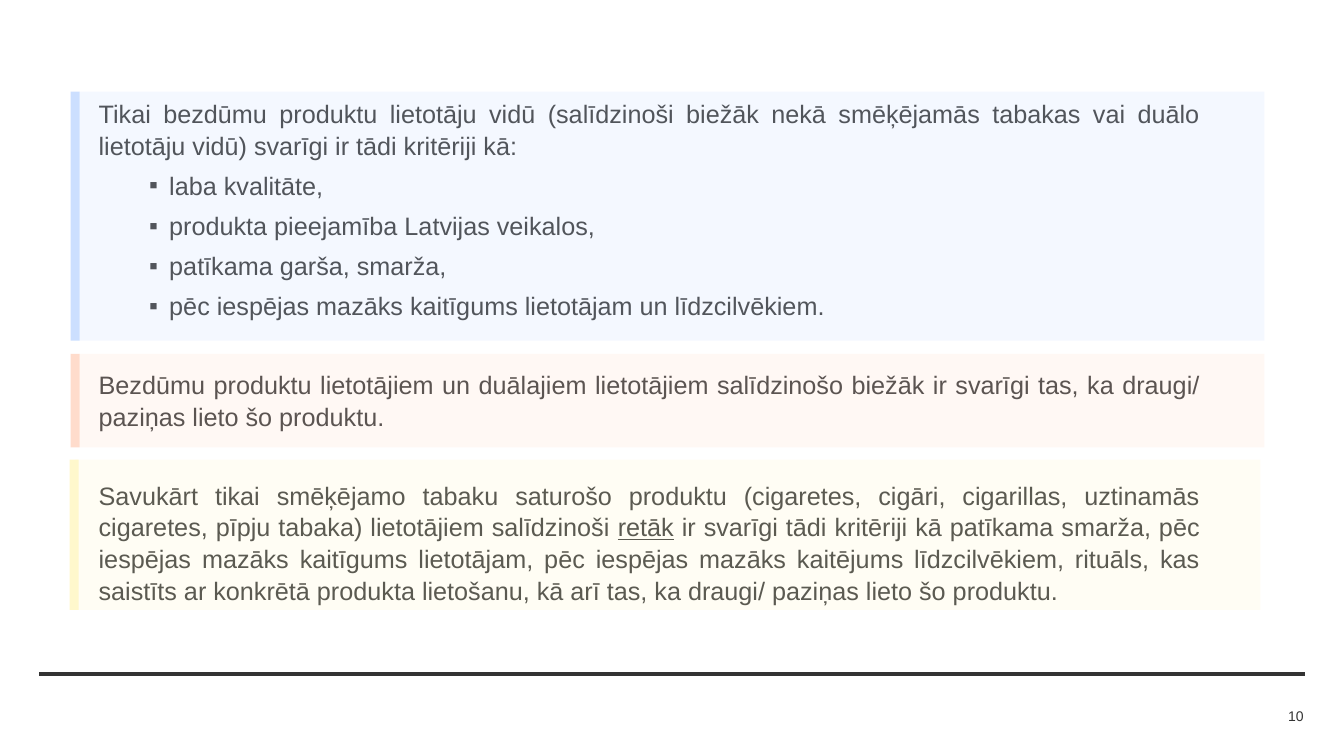
from lxml import etree
from pptx import Presentation, util as u
from pptx.dml.color import RGBColor
from pptx.enum import shapes, text
from pptx.oxml.ns import qn

INK = RGBColor(0x33, 0x33, 0x33)
BLUE = RGBColor(0xCC, 0xDF, 0xFF)
CORAL = RGBColor(0xFF, 0xDC, 0xCC)
YELLOW = RGBColor(0xFF, 0xF8, 0xCC)
FONT = "Arial"
STRIP = 0.09
GAP = 6
BREAK = 33.6  # space between the text blocks, in points

SMOKELESS = [
    "Tikai bezdūmu produktu lietotāju vidū (salīdzinoši biežāk nekā smēķējamās "
    "tabakas vai duālo lietotāju vidū) svarīgi ir tādi kritēriji kā:"
]
CRITERIA = [
    "laba kvalitāte,",
    "produkta pieejamība Latvijas veikalos,",
    "patīkama garša, smarža,",
    "pēc iespējas mazāks kaitīgums lietotājam un līdzcilvēkiem.",
]
FRIENDS = [
    "Bezdūmu produktu lietotājiem un duālajiem lietotājiem salīdzinošo biežāk "
    "ir svarīgi tas, ka draugi/ paziņas lieto šo produktu."
]
SMOKERS = [
    "Savukārt tikai smēķējamo tabaku saturošo produktu (cigaretes, cigāri, "
    "cigarillas, uztinamās cigaretes, pīpju tabaka) lietotājiem salīdzinoši ",
    "retāk",
    " ir svarīgi tādi kritēriji kā patīkama smarža, pēc iespējas mazāks "
    "kaitīgums lietotājam, pēc iespējas mazāks kaitējums līdzcilvēkiem, "
    "rituāls, kas saistīts ar konkrētā produkta lietošanu, kā arī tas, ka "
    "draugi/ paziņas lieto šo produktu.",
]
# strip left, panel left, panel width, top, height, colour
PANELS = [
    (0.7, 0.79, 11.75, 0.91, 2.47, BLUE),
    (0.7, 0.79, 11.75, 3.51, 0.93, CORAL),
    (0.69, 0.75, 11.75, 4.56, 1.49, YELLOW),
]


def write(par, parts, size=18, align=text.PP_ALIGN.JUSTIFY, before=0,
          spacing=1.05, bullet=False):
    """Fill a paragraph with runs; every second run is underlined."""
    par.alignment = align
    par.line_spacing = spacing
    par.space_before = u.Pt(before)
    if bullet:
        props = par._p.get_or_add_pPr()
        props.set("marL", str(u.Inches(0.7)))
        props.set("indent", str(u.Inches(-0.2)))
        etree.SubElement(props, qn("a:buFont")).set("typeface", FONT)
        etree.SubElement(props, qn("a:buChar")).set("char", "▪")
    for i, part in enumerate(parts):
        run = par.add_run()
        run.text = part
        run.font.name = FONT
        run.font.size = u.Pt(size)
        run.font.color.rgb = INK
        if i % 2:
            run.font.underline = True


def frame(slide, x, y, w, h):
    box = slide.shapes.add_textbox(*map(u.Inches, (x, y, w, h)))
    box.text_frame.word_wrap = True
    return box.text_frame


def body(slide, x, y, w, h):
    area = frame(slide, x, y, w, h)
    write(area.paragraphs[0], SMOKELESS)
    for item in CRITERIA:
        write(area.add_paragraph(), [item], before=GAP, bullet=True)
    for parts in (FRIENDS, SMOKERS):
        write(area.add_paragraph(), parts, before=BREAK)


def block(slide, x, y, w, h, color, alpha=None):
    """Add a plain rectangle; alpha is its opacity in percent."""
    rect = slide.shapes.add_shape(shapes.MSO_SHAPE.RECTANGLE,
                                  *map(u.Inches, (x, y, w, h)))
    rect.shadow.inherit = False
    rect.line.fill.background()
    rect.fill.solid()
    rect.fill.fore_color.rgb = color
    if alpha:
        tone = rect._element.spPr.find(".//" + qn("a:srgbClr"))
        etree.SubElement(tone, qn("a:alpha")).set("val", str(alpha * 1000))


def panels(slide):
    for strip, left, width, top, height, color in PANELS:
        block(slide, left, top, width, height, color, alpha=20)
        block(slide, strip, top, STRIP, height, color)


def footer(slide, x, y, w):
    rule = slide.shapes.add_connector(shapes.MSO_CONNECTOR.STRAIGHT,
                                      *map(u.Inches, (x, y, x + w, y)))
    rule.line.color.rgb = INK
    rule.line.width = u.Pt(3)
    etree.SubElement(rule._element.spPr, qn("a:effectLst"))
    page = frame(slide, x + w - 1.07, y + 0.3, 1.06, 0.22)
    page.margin_left = page.margin_right = 0
    page.margin_top = page.margin_bottom = 0
    page.vertical_anchor = text.MSO_ANCHOR.MIDDLE
    write(page.paragraphs[0], ["10"], size=10, align=text.PP_ALIGN.RIGHT,
          spacing=1.0)


def main():
    deck = Presentation()
    deck.slide_width, deck.slide_height = u.Inches(13.33), u.Inches(7.5)
    slide = deck.slides.add_slide(deck.slide_layouts[6])
    footer(slide, 0.39, 6.69, 12.55)
    body(slide, 0.88, 0.91, 11.12, 5.02)
    panels(slide)
    deck.save("out.pptx")


if __name__ == "__main__":
    main()
